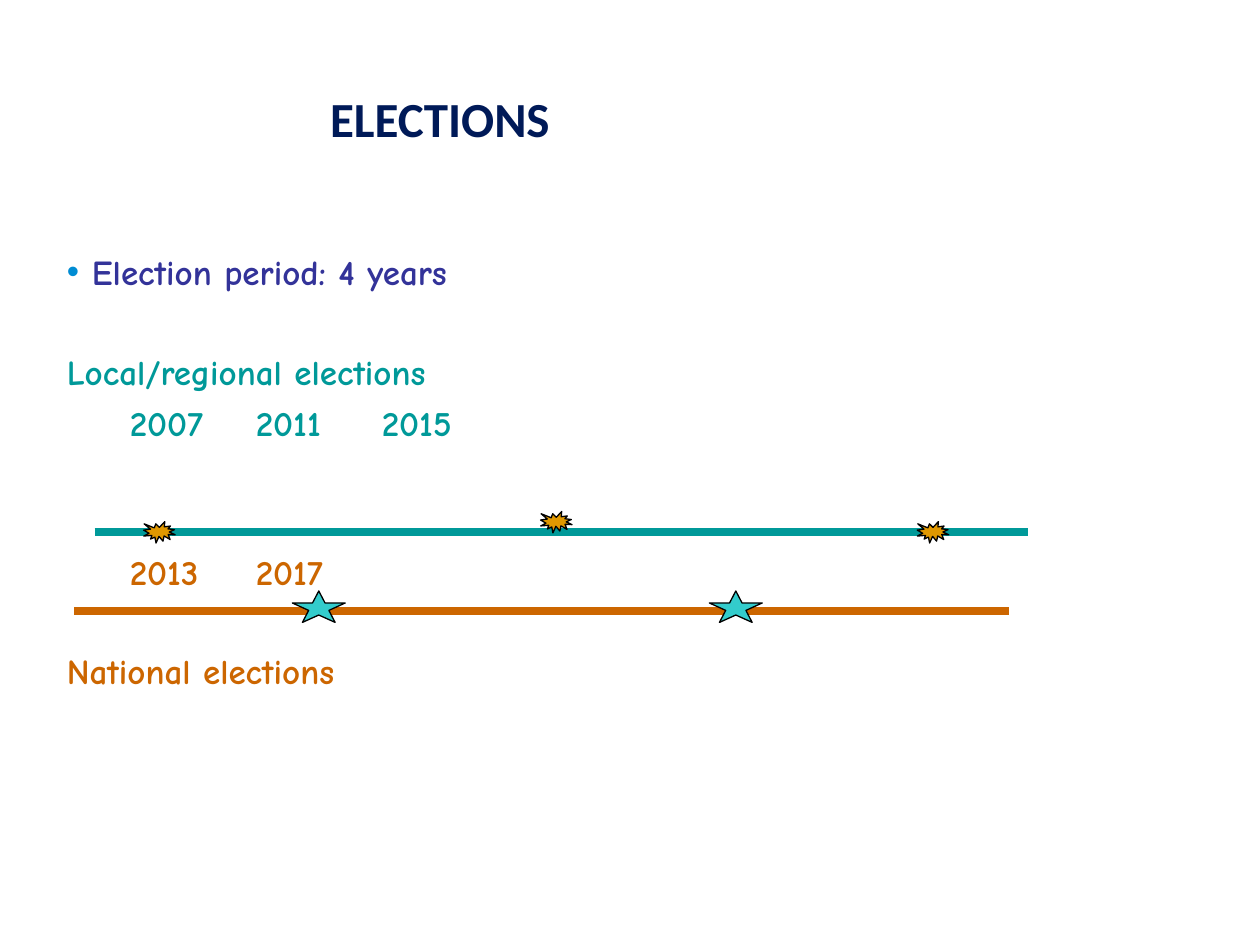
from lxml.etree import SubElement
from pptx import Presentation
from pptx.dml.color import RGBColor
from pptx.enum.shapes import MSO_CONNECTOR, MSO_SHAPE
from pptx.enum.text import MSO_ANCHOR, MSO_AUTO_SIZE, PP_ALIGN
from pptx.oxml.ns import qn
from pptx.util import Inches, Pt

COLORS = {"title": "001A58", "period": "333399", "bullet": "008CD3",
          "local": "009999", "national": "CC6600", "star": "33CCCC",
          "burst": "E09800", "outline": "000000"}


def color(name):
    return RGBColor.from_string(COLORS[name])


class ElectionSlide:
    """Style and current slide; lengths are cells of a 100 x 75 grid."""

    COLUMNS, ROWS = 100, 75
    TITLE = {"name": "Calibri", "size": Pt(28), "bold": True}
    BODY = {"name": "Comic Neue", "size": Pt(20), "bold": True}

    def __init__(self, deck):
        self.slide = deck.slides.add_slide(deck.slide_layouts[1])
        self.column = deck.slide_width / self.COLUMNS
        self.row = deck.slide_height / self.ROWS

    def x(self, columns):
        return round(columns * self.column)

    def y(self, rows):
        return round(rows * self.row)

    def place(self, holder, left, top, width, height):
        box = {"left": self.x(left), "top": self.y(top),
               "width": self.x(width), "height": self.y(height)}
        for key, value in box.items():
            setattr(holder, key, value)
        frame = holder.text_frame
        layout = {"word_wrap": True, "auto_size": MSO_AUTO_SIZE.NONE,
                  "vertical_anchor": MSO_ANCHOR.TOP}
        for key, value in layout.items():
            setattr(frame, key, value)
        return frame

    def styled_run(self, paragraph, text, tone, style):
        paragraph.alignment = PP_ALIGN.LEFT
        run = paragraph.add_run()
        run.text = text
        for key, value in style.items():
            setattr(run.font, key, value)
        run.font.color.rgb = color(tone)

    def title(self, text, box, indent):
        frame = self.place(self.slide.shapes.title, *box)
        frame.margin_top = frame.margin_bottom = 0
        paragraph = frame.paragraphs[0]
        self.styled_run(paragraph, text, "title", self.TITLE)
        properties = paragraph._p.get_or_add_pPr()
        properties.set("marL", str(self.x(indent)))
        properties.set("indent", "0")

    def body(self, entries, box):
        frame = self.place(self.slide.placeholders[1], *box)
        for number, (text, tone, gap, bullet, stops) in enumerate(entries):
            paragraph = frame.add_paragraph() if number else frame.paragraphs[0]
            self.list_format(paragraph, bullet, stops)
            paragraph.space_before = Pt(gap)
            self.styled_run(paragraph, text, tone, self.BODY)

    def list_format(self, paragraph, bullet, stops):
        properties = paragraph._p.get_or_add_pPr()
        hang = self.x(2) if bullet else 0
        properties.set("marL", str(hang))
        properties.set("indent", str(-hang))
        if bullet:
            tint = SubElement(properties, qn("a:buClr"))
            SubElement(tint, qn("a:srgbClr"), val=COLORS["bullet"])
            SubElement(properties, qn("a:buChar"), char="•")
        else:
            SubElement(properties, qn("a:buNone"))
        if stops:
            tabs = SubElement(properties, qn("a:tabLst"))
            for stop in stops:
                SubElement(tabs, qn("a:tab"), pos=str(self.x(stop)), algn="l")

    def timeline(self, left, right, level, tone):
        line = self.slide.shapes.add_connector(
            MSO_CONNECTOR.STRAIGHT, self.x(left), self.y(level),
            self.x(right), self.y(level))
        line.line.color.rgb = color(tone)
        line.line.width = Pt(4.5)
        SubElement(line._element.spPr, qn("a:effectLst"))

    def marker(self, kind, left, top, width, height, tone):
        mark = self.slide.shapes.add_shape(
            kind, self.x(left), self.y(top), self.x(width), self.y(height))
        mark.shadow.inherit = False
        mark.fill.solid()
        mark.fill.fore_color.rgb = color(tone)
        mark.line.color.rgb = color("outline")
        mark.line.width = Pt(0.75)


def main():
    deck = Presentation()
    deck.slide_width, deck.slide_height = Inches(10), Inches(7.5)
    elections = ElectionSlide(deck)

    # Title and list: text, colour, space before, bullet, tab stops
    elections.title("ELECTIONS", (5.1, 7, 54.9, 9.2), indent=20.1)
    near, line_pitch = 5, 28
    one_line, two_lines = near + line_pitch, near + 2 * line_pitch
    elections.body([
        ("Election period: 4 years", "period", 0, True, ()),
        ("Local/regional elections", "local", one_line, False, ()),
        ("\t2007\t2011\t2015", "local", near, False, (5, 28.6, 50.9)),
        ("\t2013\t2017", "national", two_lines, False, (12.9, 40.1)),
        ("National elections", "national", one_line, False, ()),
    ], (4.3, 19.4, 80.3, 46.1))

    # Timelines
    elections.timeline(7.5, 81.6, 42.2, "local")
    elections.timeline(5.9, 80.1, 48.5, "national")

    # National election years
    for left in (23.2, 56.3):
        elections.marker(MSO_SHAPE.STAR_5_POINT, left, 46.9, 4.2, 2.5, "star")

    # Local and regional election years
    for left, top in ((11.4, 41.4), (42.9, 40.6), (72.8, 41.4)):
        elections.marker(MSO_SHAPE.EXPLOSION1, left, top, 2.5, 1.7, "burst")

    deck.save("out.pptx")


if __name__ == "__main__":
    main()
